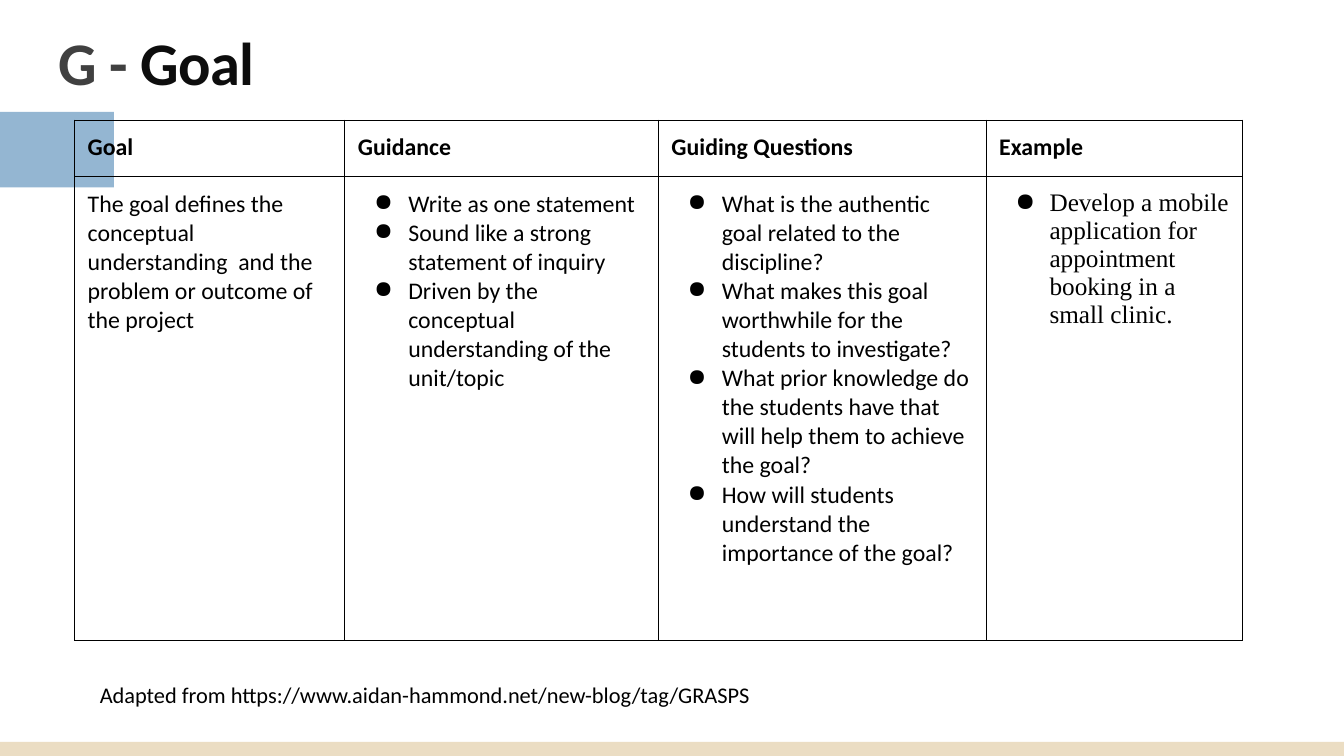
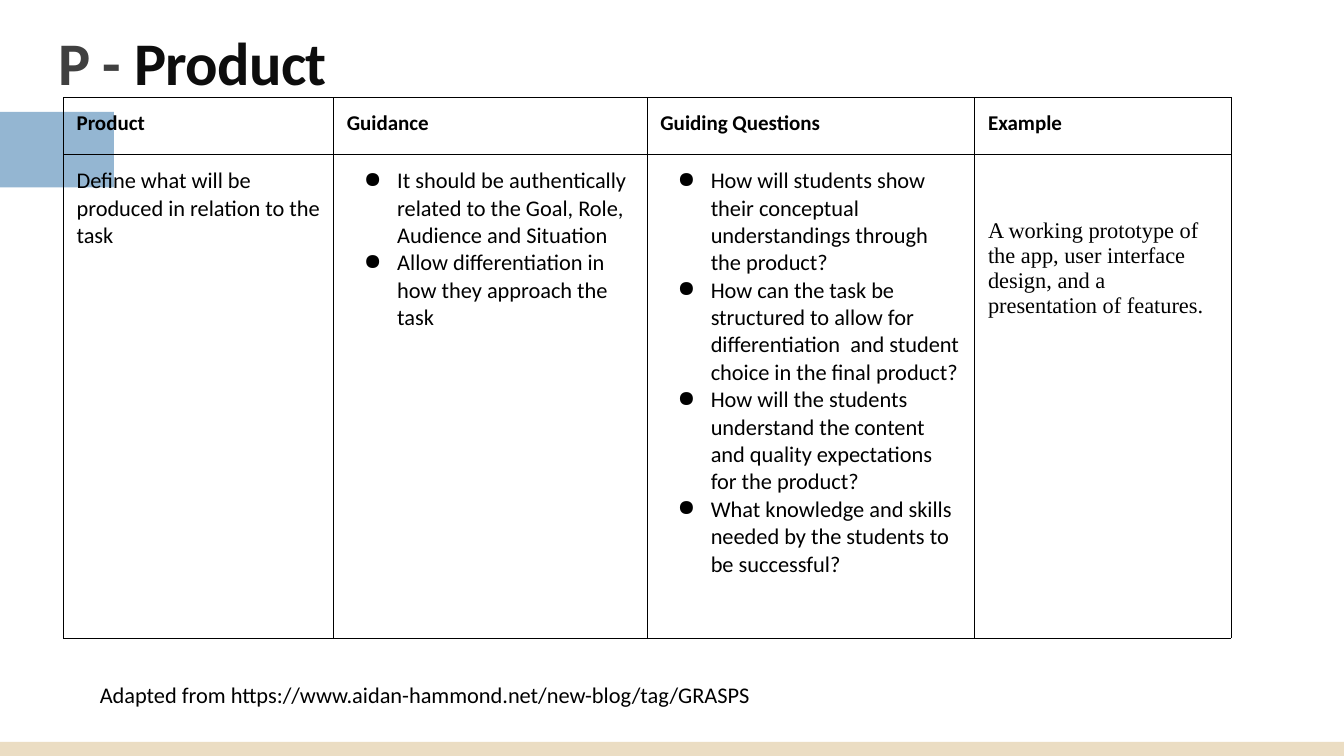
"""Build two GRASPS planning slides, each with a titled four-column table."""
from lxml.etree import SubElement
from pptx import Presentation
from pptx.dml.color import RGBColor
from pptx.enum.shapes import MSO_SHAPE as Preset
from pptx.enum.text import MSO_ANCHOR as Anchor, MSO_AUTO_SIZE as AutoSize, PP_ALIGN as Align
from pptx.oxml.ns import qn
from pptx.util import Inches, Pt

BLACK = RGBColor(0x00, 0x00, 0x00)
LETTER_GREY = RGBColor(0x40, 0x40, 0x40)
WORD_BLACK = RGBColor(0x0D, 0x0D, 0x0D)
BAND_BLUE = RGBColor(0x94, 0xB6, 0xD2)
BAND_SAND = RGBColor(0xEB, 0xDD, 0xC3)

SANS, SERIF = "Calibri", "Times New Roman"
INSET = 0.13
MARGINS = {f"margin_{side}": Inches(INSET) for side in ("left", "top", "right", "bottom")}
COLUMN_WIDTHS = (2.68, 3.11, 3.25, 2.54)
HEADER_HEIGHT = 0.56
BULLET_LEFT = 0.5
BANDS = (
    ((0, 1.11, 1.13, 0.75), BAND_BLUE),
    ((0, 7.36, 13.33, 0.14), BAND_SAND),
)
TITLE_BOX = (0.45, 0.2, 12.42, 0.84)
CREDIT_BOX = (0.86, 6.63, 9.25, 0.54)
CREDIT = "Adapted from https://www.aidan-hammond.net/new-blog/tag/GRASPS"

TOPICS = [
    {
        "letter": "G", "word": "Goal",
        "table_at": (0.74, 1.19), "body_height": 4.6,
        "header_size": 17, "body_size": 17, "example_size": 18,
        "hanging": 0.34, "example_bulleted": True, "example_top": INSET,
        "definition": "The goal defines the conceptual understanding  and the problem or outcome of the project",
        "guidance": [
            "Write as one statement",
            "Sound like a strong statement of inquiry",
            "Driven by the conceptual understanding of the unit/topic",
        ],
        "questions": [
            "What is the authentic goal related to the discipline?",
            "What makes this goal worthwhile for the students to investigate?",
            "What prior knowledge do the students have that will help them to achieve the goal?",
            "How will students understand the importance of the goal?",
        ],
        "example": "Develop a mobile application for appointment booking in a small clinic.",
    },
    {
        "letter": "P", "word": "Product",
        "table_at": (0.63, 0.97), "body_height": 4.8,
        "header_size": 15, "body_size": 16, "example_size": 16,
        "hanging": 0.33, "example_bulleted": False, "example_top": 0.64,
        "definition": "Define what will be produced in relation to the task",
        "guidance": [
            "It should be authentically related to the Goal, Role, Audience and Situation",
            "Allow differentiation in how they approach the task",
        ],
        "questions": [
            "How will students show their conceptual understandings through the product?",
            "How can the task be structured to allow for differentiation  and student choice in the final product?",
            "How will the students understand the content and quality expectations for the product?",
            "What knowledge and skills needed by the students to be successful?",
        ],
        "example": "A working prototype of the app, user interface design, and a presentation of features.",
    },
]


def apply(target, values):
    for name, value in values.items():
        setattr(target, name, value)


def add_run(paragraph, text, size, color=BLACK, bold=False, font=SANS):
    run = paragraph.add_run()
    run.text = text
    apply(run.font, {"size": Pt(size), "bold": bold, "name": font})
    run.font.color.rgb = color
    return run


def add_bullet(paragraph, hanging):
    properties = paragraph._p.get_or_add_pPr()
    properties.set("marL", str(Inches(BULLET_LEFT)))
    properties.set("indent", str(-Inches(hanging)))
    SubElement(properties, qn("a:buChar"), char="●")


def add_borders(cell):
    properties = cell._tc.get_or_add_tcPr()
    for side in ("lnL", "lnR", "lnT", "lnB"):
        line = SubElement(properties, qn(f"a:{side}"), w=str(Pt(0.75)))
        fill = SubElement(line, qn("a:solidFill"))
        SubElement(fill, qn("a:srgbClr"), val=str(BLACK))


def fill_cell(cell, texts, size, hanging=None, top=INSET, **style):
    apply(cell, {**MARGINS, "margin_top": Inches(top), "vertical_anchor": Anchor.TOP})
    add_borders(cell)
    cell.fill.background()
    frame = cell.text_frame
    for index, text in enumerate(texts):
        paragraph = frame.add_paragraph() if index else frame.paragraphs[0]
        if hanging:
            add_bullet(paragraph, hanging)
        add_run(paragraph, text, size, **style)


def add_bands(slide):
    """Draw the bands and hand them to the layout that every slide shares."""
    shared = slide.slide_layout.shapes.element
    for position, (box, color) in enumerate(BANDS, start=2):
        band = slide.shapes.add_shape(Preset.RECTANGLE, *map(Inches, box))
        band.shadow.inherit = False
        band.fill.solid()
        band.fill.fore_color.rgb = color
        band.line.fill.background()
        shared.insert(position, band.element)


def set_title(slide, topic):
    title = slide.shapes.title
    apply(title, dict(zip(("left", "top", "width", "height"), map(Inches, TITLE_BOX))))
    frame = title.text_frame
    apply(frame, {**MARGINS, "word_wrap": True, "auto_size": AutoSize.NONE,
                  "vertical_anchor": Anchor.TOP})
    heading = frame.paragraphs[0]
    apply(heading, {"alignment": Align.LEFT, "line_spacing": 0.9})
    for text, color in ((f"{topic['letter']} - ", LETTER_GREY), (topic["word"], WORD_BLACK)):
        run = add_run(heading, text, 43.2, color, bold=True)
        run._r.get_or_add_rPr().set("spc", "-50")


def add_topic_table(slide, topic):
    heights = (HEADER_HEIGHT, topic["body_height"])
    box = (*topic["table_at"], sum(COLUMN_WIDTHS), sum(heights))
    table = slide.shapes.add_table(2, len(COLUMN_WIDTHS), *map(Inches, box)).table
    apply(table, {"first_row": False, "horz_banding": False})
    for column, width in zip(table.columns, COLUMN_WIDTHS):
        column.width = Inches(width)
    for row, height in zip(table.rows, heights):
        row.height = Inches(height)

    headers = (topic["word"], "Guidance", "Guiding Questions", "Example")
    for column, header in enumerate(headers):
        fill_cell(table.cell(0, column), [header], topic["header_size"], bold=True)

    size, hanging = topic["body_size"], topic["hanging"]
    fill_cell(table.cell(1, 0), [topic["definition"]], size)
    fill_cell(table.cell(1, 1), topic["guidance"], size, hanging)
    fill_cell(table.cell(1, 2), topic["questions"], size, hanging)
    fill_cell(table.cell(1, 3), [topic["example"]], topic["example_size"],
              hanging if topic["example_bulleted"] else None,
              topic["example_top"], font=SERIF)


def add_credit(slide):
    frame = slide.shapes.add_textbox(*map(Inches, CREDIT_BOX)).text_frame
    apply(frame, {**MARGINS, "word_wrap": True, "auto_size": AutoSize.SHAPE_TO_FIT_TEXT})
    add_run(frame.paragraphs[0], CREDIT, 16)


def main():
    deck = Presentation()
    apply(deck, {"slide_width": Inches(13.33), "slide_height": Inches(7.5)})
    title_only = deck.slide_layouts[5]
    for number, topic in enumerate(TOPICS):
        slide = deck.slides.add_slide(title_only)
        if number == 0:
            add_bands(slide)
        set_title(slide, topic)
        add_topic_table(slide, topic)
        add_credit(slide)
    deck.save("out.pptx")


if __name__ == "__main__":
    main()
